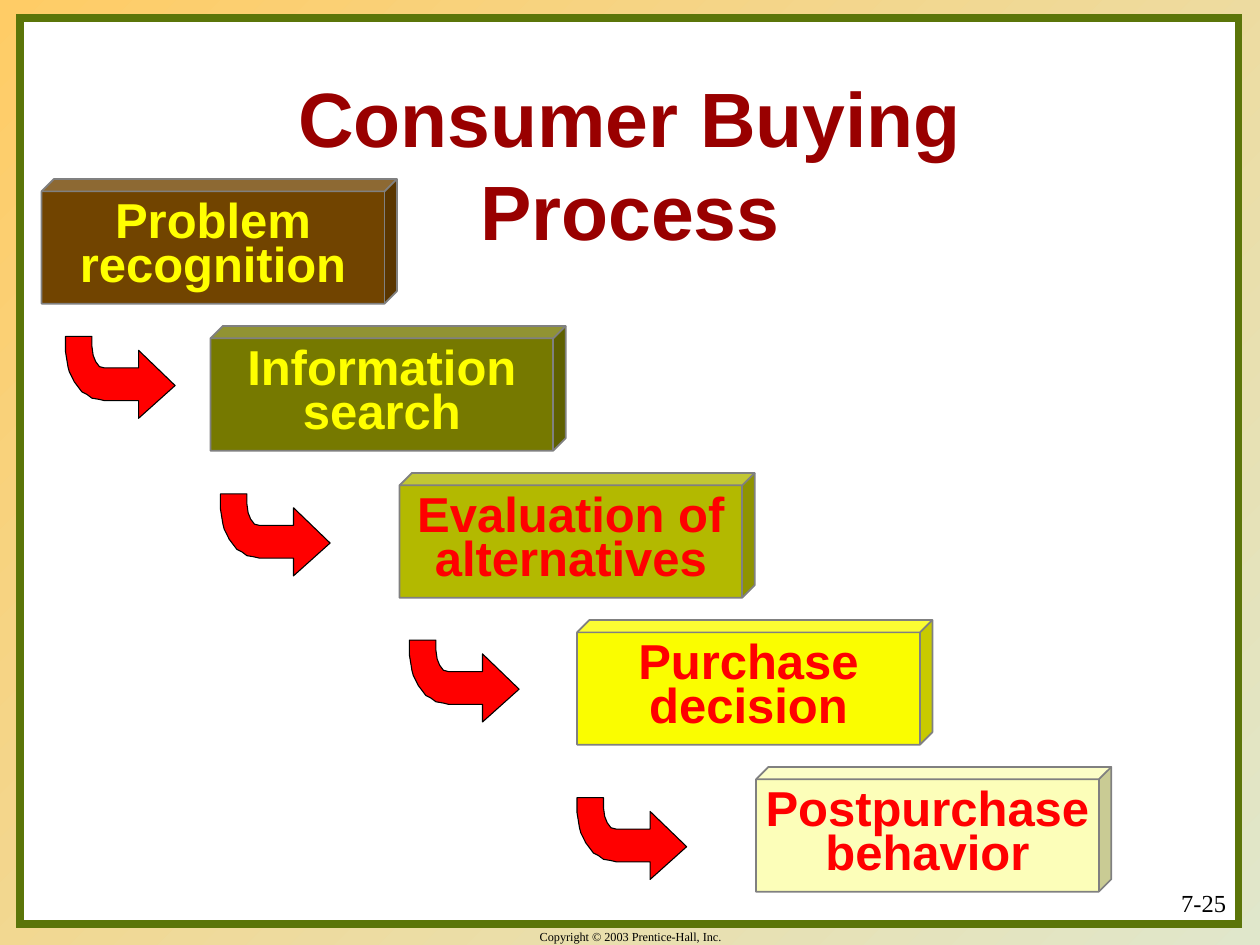
from lxml.etree import SubElement
from pptx import Presentation
from pptx.dml.color import RGBColor
from pptx.enum.shapes import MSO_SHAPE as Shape
from pptx.enum.text import MSO_ANCHOR as Anchor, PP_ALIGN as Align
from pptx.oxml.ns import qn
from pptx.util import Inches, Pt

WIDTH, HEIGHT = 10, 7.5
COLORS = {
    "gold": "FFCC66", "sage": "E0E7CB", "white": "FFFFFF", "green": "5B7509",
    "black": "000000", "maroon": "990000", "gray": "808080", "red": "FF0000",
    "yellow": "FFFF00", "brown": "714400", "olive": "767900", "moss": "B3B900",
    "lemon": "FAFD00", "cream": "FCFEB9",
}
TOP, ROW = 1.42, 7 / 6
CUBE_SIZE = (2.82, 0.99)
STEPS = [
    (0.33, "Problem\nrecognition", "brown", "yellow"),
    (1.67, "Information\nsearch", "olive", "yellow"),
    (3.17, "Evaluation of\nalternatives", "moss", "red"),
    (4.58, "Purchase\ndecision", "lemon", "red"),
    (6, "Postpurchase\nbehavior", "cream", "red"),
]
ARROWS = [(0.52, 2.67), (1.75, 3.92), (3.25, 5.08), (4.58, 6.33)]
ARROW_OUTLINE = [
    (58, 65), (87, 39), (58, 11), (58, 25), (31, 25), (27, 24), (24, 20),
    (22, 15), (21, 8), (21, 0), (0, 0), (0, 12), (1, 18), (2, 24), (3, 28),
    (5, 32), (7, 36), (10, 40), (13, 44), (17, 46), (21, 49), (27, 50),
    (31, 51), (58, 51),
]


def rgb(name):
    """Return the named colour."""
    return RGBColor.from_string(COLORS[name])


def apply(target, values):
    """Set each attribute in values on the target."""
    for name, value in values.items():
        setattr(target, name, value)


def style_shape(shape, fill, line, width):
    """Give a shape a flat fill and an outline."""
    shape.shadow.inherit = False
    shape.fill.solid()
    shape.fill.fore_color.rgb = rgb(fill)
    shape.line.color.rgb = rgb(line)
    shape.line.width = Pt(width)


def write(frame, text, color, font, frame_format, paragraph_format):
    """Fill a text frame and format every paragraph alike."""
    apply(frame, frame_format)
    frame.text = text
    for paragraph in frame.paragraphs:
        apply(paragraph, paragraph_format)
        apply(paragraph.font, font)
        paragraph.font.color.rgb = rgb(color)


def add_background(slide):
    """Shade the slide diagonally and frame its white panel with sharp corners."""
    fill = slide.background.fill
    fill.gradient()
    fill.gradient_angle = 315
    for stop, name, position in zip(fill.gradient_stops, ("gold", "sage"), (0, 1)):
        stop.color.rgb = rgb(name)
        stop.position = position
    box = map(Inches, (0.16, 0.14, 9.67, 7.19))
    panel = slide.shapes.add_shape(Shape.RECTANGLE, *box)
    style_shape(panel, "white", "green", 4.5)
    outline = panel.element.spPr.find(qn("a:ln"))
    SubElement(outline, qn("a:miter")).set("lim", "800000")


def add_title(slide, box, text):
    """Place the title placeholder in front of the panel."""
    title = slide.shapes.title
    slide.shapes.element.append(title.element)
    apply(title, dict(zip(("left", "top", "width", "height"), map(Inches, box))))
    write(title.text_frame, text, "maroon",
          {"name": "Arial", "size": Pt(44), "bold": True},
          {"word_wrap": True, "vertical_anchor": Anchor.MIDDLE},
          {"alignment": Align.CENTER})


def add_note(slide, box, text, size, alignment):
    """Add a small serif line of text."""
    note = slide.shapes.add_textbox(*map(Inches, box))
    write(note.text_frame, text, "black",
          {"name": "Times New Roman", "size": Pt(size)},
          {"word_wrap": True}, {"alignment": alignment})


def add_step(slide, box, text, fill, color):
    """Add one labelled block of the staircase."""
    cube = slide.shapes.add_shape(Shape.CUBE, *map(Inches, box))
    cube.adjustments[0] = 0.1
    style_shape(cube, fill, "gray", 1)
    write(cube.text_frame, text, color,
          {"name": "Arial", "size": Pt(28), "bold": True},
          {"word_wrap": False, "vertical_anchor": Anchor.MIDDLE},
          {"alignment": Align.CENTER, "line_spacing": 0.75})


def add_arrow(slide, left, top):
    """Add a bent arrow leading to the next step."""
    start, *rest = ARROW_OUTLINE
    builder = slide.shapes.build_freeform(*start, scale=Inches(0.01))
    builder.add_line_segments(rest, close=True)
    arrow = builder.convert_to_shape(Inches(left), Inches(top))
    style_shape(arrow, "red", "black", 0.63)


def main():
    """Build the slide and save it."""
    presentation = Presentation()
    presentation.slide_width, presentation.slide_height = Inches(WIDTH), Inches(HEIGHT)
    slide = presentation.slides.add_slide(presentation.slide_layouts[5])
    add_background(slide)
    add_note(slide, (3.42, 7.33, 3.17, 0.17),
             "Copyright © 2003 Prentice-Hall, Inc.", 7, Align.CENTER)
    add_note(slide, (7.75, 7, 2.08, 0.5), "7-25", 14, Align.RIGHT)
    add_title(slide, (0.75, 0.67, 8.5, 1.25), "Consumer Buying\vProcess")
    for row, (left, text, fill, color) in enumerate(STEPS):
        add_step(slide, (left, TOP + row * ROW, *CUBE_SIZE), text, fill, color)
    for left, top in ARROWS:
        add_arrow(slide, left, top)
    presentation.save("out.pptx")


if __name__ == "__main__":
    main()
